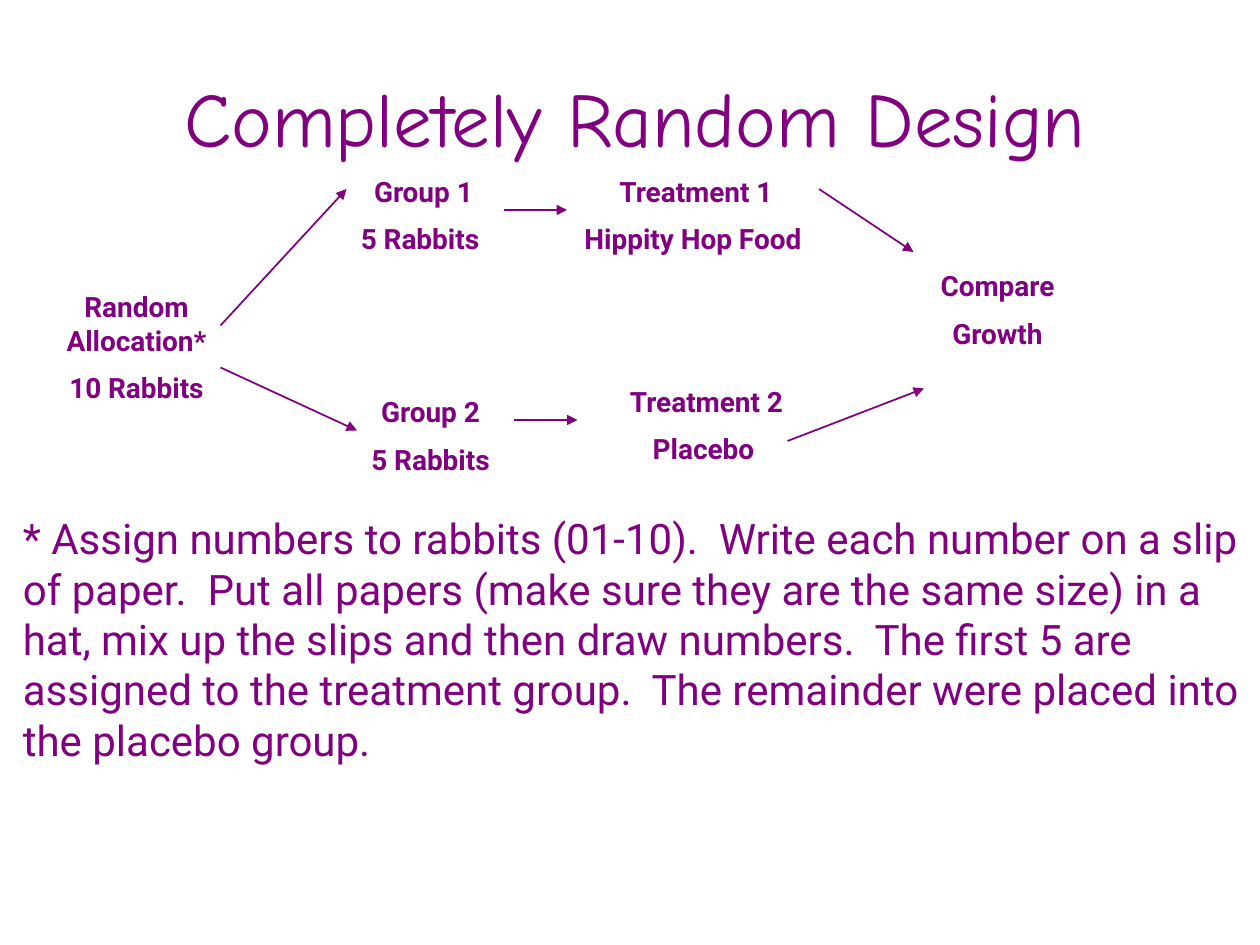
from lxml.etree import SubElement
from pptx import Presentation
from pptx.dml.color import RGBColor
from pptx.enum.shapes import MSO_CONNECTOR
from pptx.enum.text import MSO_ANCHOR, MSO_AUTO_SIZE, PP_ALIGN
from pptx.oxml.ns import qn
from pptx.util import Pt

PURPLE = RGBColor(0x80, 0x00, 0x80)
WHITE = RGBColor(0xFF, 0xFF, 0xFF)

TITLE_FONT = {"name": "Comic Neue", "size": Pt(44), "bold": False}
LABEL_FONT = {"name": "Roboto", "size": Pt(16), "bold": True}
NOTE_FONT = {"name": "Roboto", "size": Pt(24), "bold": False}

LABEL_WIDTH, LABEL_HEIGHT = 156, 96
LABELS = [
    (0, 162, ["Random Allocation*", "10 Rabbits"]),
    (162, 96, [" Group 1", "5 Rabbits"]),
    (168, 222, ["Group 2", "5 Rabbits"]),
    (318, 96, [" Treatment 1", "Hippity Hop Food"]),
    (324, 216, [" Treatment 2", "Placebo"]),
    (492, 150, ["Compare", "Growth"]),
]
ARROWS = [
    (126, 186, 198, 108),
    (126, 210, 204, 246),
    (288, 120, 324, 120),
    (294, 240, 330, 240),
    (468, 108, 522, 144),
    (450, 252, 528, 222),
]
NOTE = (
    "* Assign numbers to rabbits (01-10).  Write each number on a slip of paper.  "
    "Put all papers (make sure they are the same size) in a hat, mix up the slips "
    "and then draw numbers.  The first 5 are assigned to the treatment group.  "
    "The remainder were placed into the placebo group."
)


def set_values(target, values):
    """Set every attribute named in a dict of format values."""
    for name, value in values.items():
        setattr(target, name, value)


def write_paragraphs(frame, lines, font, alignment):
    """Fill a text frame with one formatted paragraph per line."""
    for index, line in enumerate(lines):
        para = frame.paragraphs[0] if index == 0 else frame.add_paragraph()
        space = Pt(font["size"].pt / 2) if index else Pt(0)
        set_values(para, {"alignment": alignment, "space_before": space})
        span = para.add_run()
        span.text = line
        set_values(span.font, font)
        span.font.color.rgb = PURPLE


def add_title(page, text):
    """Place and format the title placeholder."""
    title = page.shapes.title
    set_values(title, {"left": Pt(57), "top": Pt(21.6), "width": Pt(612), "height": Pt(90)})
    set_values(title.text_frame, {
        "word_wrap": True,
        "auto_size": MSO_AUTO_SIZE.NONE,
        "vertical_anchor": MSO_ANCHOR.MIDDLE,
    })
    write_paragraphs(title.text_frame, [text], TITLE_FONT, PP_ALIGN.CENTER)


def add_text(page, area, lines, font, alignment, fit=MSO_AUTO_SIZE.NONE):
    """Add a wrapping text box in an area given in points."""
    box = page.shapes.add_textbox(*map(Pt, area))
    set_values(box.text_frame, {"word_wrap": True, "auto_size": fit})
    write_paragraphs(box.text_frame, lines, font, alignment)


def add_arrow(page, ends):
    """Add a straight arrow between two points."""
    arrow = page.shapes.add_connector(MSO_CONNECTOR.STRAIGHT, *map(Pt, ends))
    arrow.line.width = Pt(1)
    arrow.line.color.rgb = PURPLE
    SubElement(arrow.line._get_or_add_ln(), qn("a:tailEnd"), type="triangle")
    SubElement(arrow._element.spPr, qn("a:effectLst"))


def main():
    """Build the random design slide."""
    deck = Presentation()
    set_values(deck, {"slide_width": Pt(720), "slide_height": Pt(540)})
    page = deck.slides.add_slide(deck.slide_layouts[5])
    page.background.fill.solid()
    page.background.fill.fore_color.rgb = WHITE
    add_title(page, "Completely Random Design")
    for left, top, lines in LABELS:
        area = (left, top, LABEL_WIDTH, LABEL_HEIGHT)
        add_text(page, area, lines, LABEL_FONT, PP_ALIGN.CENTER)
    for ends in ARROWS:
        add_arrow(page, ends)
    add_text(page, (6, 289.5, 714, 152.5), [NOTE], NOTE_FONT, PP_ALIGN.LEFT,
             MSO_AUTO_SIZE.SHAPE_TO_FIT_TEXT)
    deck.save("out.pptx")


if __name__ == "__main__":
    main()
